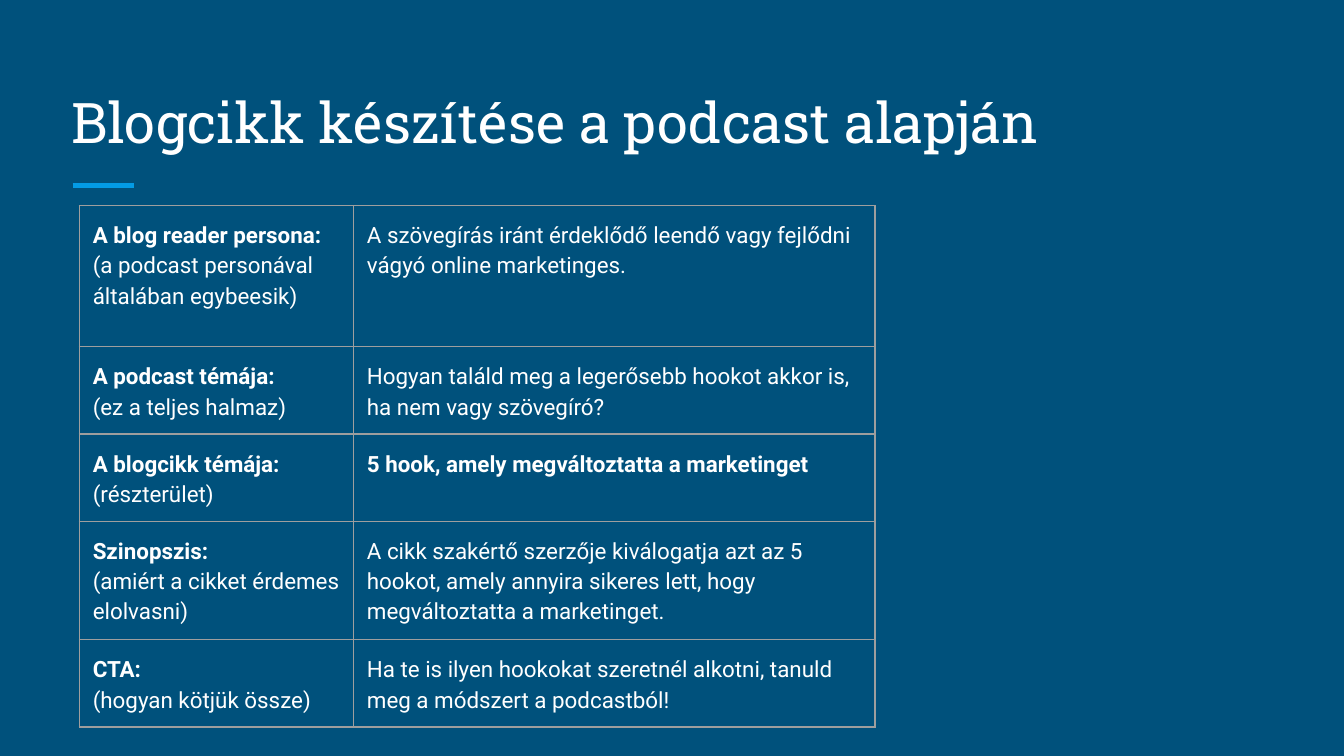
"""Build a slide with a title and a table that plans a blog article from a podcast."""
import pptx
import pptx.dml.color
import pptx.enum.shapes
import pptx.enum.text
import pptx.oxml
import pptx.oxml.ns
import pptx.util
from pptx.util import Inches

WHITE = "FFFFFF"


def color(value):
    return pptx.dml.color.RGBColor.from_string(value)


def add_run(p, text, size, font, bold=False):
    r = p.add_run()
    r.text = text
    r.font.size = pptx.util.Pt(size)
    r.font.name = font
    r.font.bold = bold
    r.font.color.rgb = color(WHITE)


prs = pptx.Presentation()
prs.slide_width = Inches(10)
prs.slide_height = Inches(10) * 9 // 16
s = prs.slides.add_slide(prs.slide_layouts[6])
s.background.fill.solid()
s.background.fill.fore_color.rgb = color("00517C")

accent = s.shapes.add_connector(
    pptx.enum.shapes.MSO_CONNECTOR.STRAIGHT,
    Inches(0.54), Inches(1.38), Inches(1), Inches(1.38))
accent.line.color.rgb = color("039BE5")
accent.line.width = pptx.util.Pt(3)
accent._element.spPr.append(pptx.oxml.parse_xml(
    f'<a:effectLst {pptx.oxml.ns.nsdecls("a")}/>'))

sp = s.shapes.add_textbox(Inches(0.43), Inches(0.5), Inches(9.15), Inches(0.75))
tf = sp.text_frame
tf.word_wrap = True
tf.vertical_anchor = pptx.enum.text.MSO_ANCHOR.BOTTOM
tf.margin_left = tf.margin_right = tf.margin_top = tf.margin_bottom = Inches(0.1)
add_run(tf.paragraphs[0], "Blogcikk készítése a podcast alapján", 30, "Roboto Slab")

rows = [
    (1.05, [[("A blog reader persona: ", True),
             ("(a podcast personával általában egybeesik)", False)]],
     "A szövegírás iránt érdeklődő leendő vagy fejlődni vágyó online marketinges.", False),
    (0.61, [[("A podcast témája:", True)], [("(ez a teljes halmaz)", False)]],
     "Hogyan találd meg a legerősebb hookot akkor is, ha nem vagy szövegíró?", False),
    (0.61, [[("A blogcikk témája:", True)], [("(részterület)", False)]],
     "5 hook, amely megváltoztatta a marketinget", True),
    (0.83, [[("Szinopszis:", True)], [("(amiért a cikket érdemes elolvasni)", False)]],
     "A cikk szakértő szerzője kiválogatja azt az 5 hookot, amely annyira sikeres lett, "
     "hogy megváltoztatta a marketinget.", False),
    (0.61, [[("CTA:", True)], [("(hogyan kötjük össze)", False)]],
     "Ha te is ilyen hookokat szeretnél alkotni, tanuld meg a módszert a podcastból!", False),
]
widths = [2.04, 3.88]

table = s.shapes.add_table(
    len(rows), len(widths), Inches(0.59), Inches(1.53),
    Inches(sum(widths)), Inches(sum(row[0] for row in rows))).table
table.first_row = table.horz_banding = False
for column, width in zip(table.columns, widths):
    column.width = Inches(width)

for i, (height, label, answer, bold) in enumerate(rows):
    table.rows[i].height = Inches(height)
    for j, paragraphs in enumerate([label, [[(answer, bold)]]]):
        cell = table.cell(i, j)
        cell.margin_left = cell.margin_right = cell.margin_top = Inches(0.1)
        cell.margin_bottom = Inches(0.09)
        tf = cell.text_frame
        for k, runs in enumerate(paragraphs):
            p = tf.add_paragraph() if k else tf.paragraphs[0]
            p.line_spacing = 1.15
            for text, is_bold in runs:
                add_run(p, text, 12, "Roboto", is_bold)
        for side in ("lnL", "lnR", "lnT", "lnB"):
            cell._tc.get_or_add_tcPr().append(pptx.oxml.parse_xml(
                f'<a:{side} {pptx.oxml.ns.nsdecls("a")} w="{pptx.util.Pt(0.75)}">'
                f'<a:solidFill><a:srgbClr val="9E9E9E"/></a:solidFill></a:{side}>'))
        cell.fill.background()

prs.save("out.pptx")
